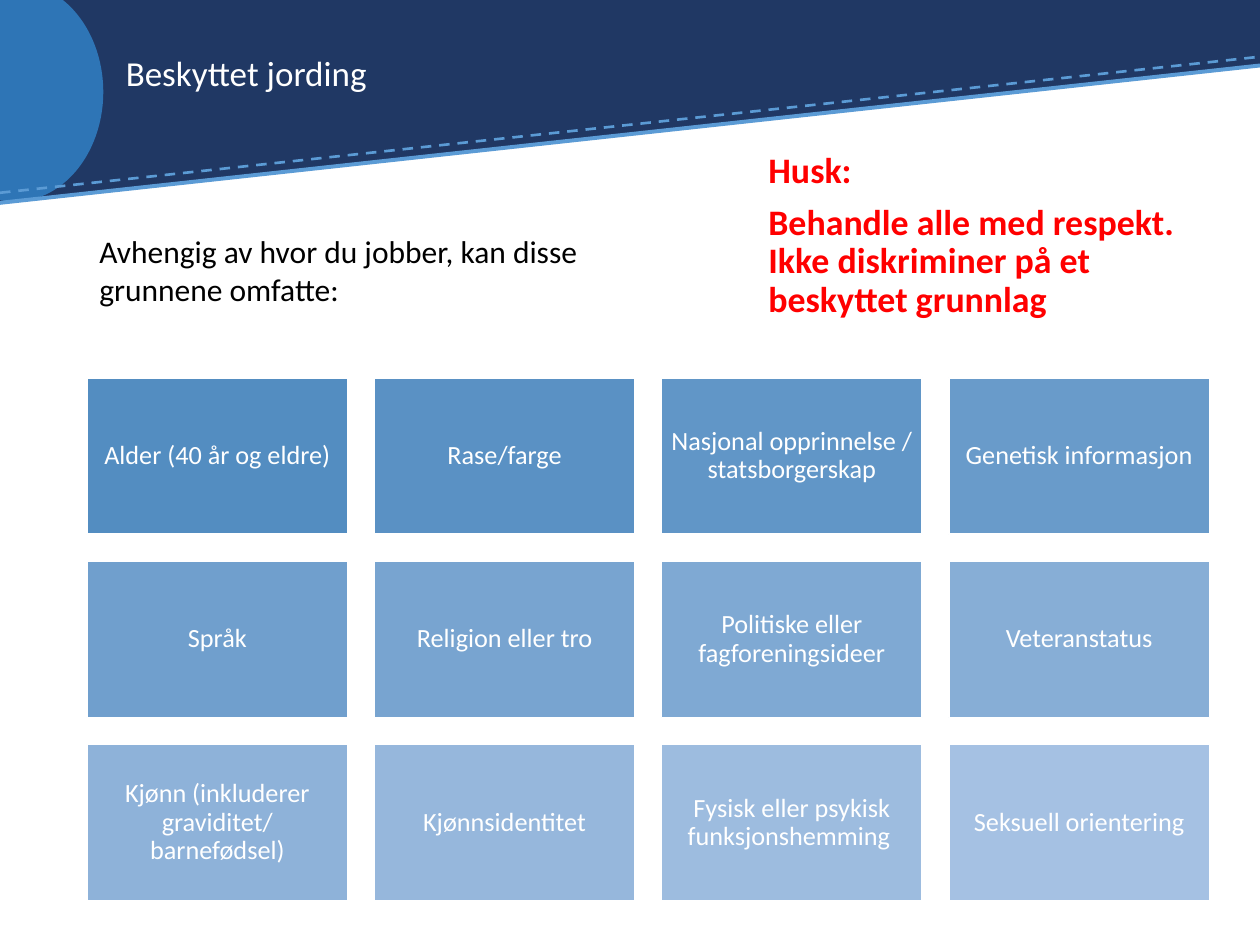
"""Build the slide on protected grounds with a banner and a grid of tiles."""

import dataclasses
import typing

import lxml.etree
import pptx
import pptx.dml.color
import pptx.enum.dml
import pptx.enum.shapes
import pptx.enum.text
import pptx.oxml.ns
import pptx.util
from pptx.util import Inches

SHAPE = pptx.enum.shapes.MSO_SHAPE
ANCHOR = pptx.enum.text.MSO_ANCHOR
ALIGN = pptx.enum.text.PP_ALIGN


@dataclasses.dataclass(frozen=True)
class Theme:
    font: str = "Calibri"
    navy: str = "203864"
    blue: str = "2E75B6"
    stripe: str = "5B9BD5"
    white: str = "FFFFFF"
    black: str = "000000"
    red: str = "FF0000"
    tile_first: str = "538DC1"
    tile_last: str = "A5C1E3"
    title_size: float = 20
    reminder_size: float = 20.5
    intro_size: float = 18
    tile_size: float = 15


@dataclasses.dataclass(frozen=True)
class Box:
    left: float
    top: float
    width: float
    height: float

    def lengths(self) -> list[int]:
        return [Inches(value) for value in dataclasses.astuple(self)]


@dataclasses.dataclass(frozen=True)
class TextStyle:
    size: float
    color: str
    bold: bool = False
    spacing: float = 0.9
    before: float = 0
    align: typing.Any = ALIGN.LEFT
    anchor: typing.Any = ANCHOR.TOP


@dataclasses.dataclass(frozen=True)
class Stripe:
    start_y: float
    end_y: float
    width: float
    dash: typing.Any = None


THEME = Theme()
SLIDE_WIDTH, SLIDE_HEIGHT = 10, 7.5
STRIPES = [
    Stripe(1.53, 0.45, 1.5, pptx.enum.dml.MSO_LINE.DASH),
    Stripe(1.61, 0.52, 2.25),
]
GROUNDS = [
    "Alder (40 år og eldre)",
    "Rase/farge",
    "Nasjonal opprinnelse / statsborgerskap",
    "Genetisk informasjon",
    "Språk",
    "Religion eller tro",
    "Politiske eller fagforeningsideer",
    "Veteranstatus",
    "Kjønn (inkluderer graviditet/ barnefødsel)",
    "Kjønnsidentitet",
    "Fysisk eller psykisk funksjonshemming ",
    "Seksuell orientering",
]
COLUMNS = 4
FIRST_TILE = Box(0.69, 3, 2.07, 1.24)
COLUMN_STEP, ROW_STEP = 2.28, 1.455


def rgb(color: str) -> pptx.dml.color.RGBColor:
    """Turn a hex string into a colour."""
    return pptx.dml.color.RGBColor.from_string(color)


def blend(first: str, last: str, share: float) -> str:
    """Return the colour that lies a share of the way from first to last."""
    pairs = zip(bytes.fromhex(first), bytes.fromhex(last))
    return bytes(int(a + (b - a) * share) for a, b in pairs).hex().upper()


def write(frame, paragraphs: list[str], style: TextStyle) -> None:
    """Fill a text frame with paragraphs in one style."""
    frame.word_wrap = True
    frame.vertical_anchor = style.anchor
    for index, text in enumerate(paragraphs):
        paragraph = frame.add_paragraph() if index else frame.paragraphs[0]
        paragraph.text = text
        paragraph.alignment = style.align
        paragraph.line_spacing = style.spacing
        if index:
            paragraph.space_before = pptx.util.Pt(style.before)
        paragraph.font.name = THEME.font
        paragraph.font.size = pptx.util.Pt(style.size)
        paragraph.font.bold = style.bold
        paragraph.font.color.rgb = rgb(style.color)


def add_filled(slide, kind, box: Box, color: str):
    """Add a preset shape with a plain fill and no line."""
    shape = slide.shapes.add_shape(kind, *box.lengths())
    shape.shadow.inherit = False
    shape.fill.solid()
    shape.fill.fore_color.rgb = rgb(color)
    shape.line.fill.background()
    return shape


def add_text(slide, box: Box, paragraphs: list[str], style: TextStyle) -> None:
    """Add a text box."""
    write(slide.shapes.add_textbox(*box.lengths()).text_frame, paragraphs, style)


def add_stripe(slide, stripe: Stripe) -> None:
    """Add a slanted line across the slide."""
    line = slide.shapes.add_connector(
        pptx.enum.shapes.MSO_CONNECTOR.STRAIGHT,
        Inches(0), Inches(stripe.start_y), Inches(SLIDE_WIDTH), Inches(stripe.end_y),
    )
    line.line.color.rgb = rgb(THEME.stripe)
    line.line.width = pptx.util.Pt(stripe.width)
    if stripe.dash is not None:
        line.line.dash_style = stripe.dash
    lxml.etree.SubElement(line.element.spPr, pptx.oxml.ns.qn("a:effectLst"))


def add_banner(slide) -> None:
    """Add the slanted banner with its disc and stripes."""
    add_filled(slide, SHAPE.RECTANGLE, Box(0, 0, SLIDE_WIDTH, 0.52), THEME.navy)
    slope = add_filled(slide, SHAPE.RIGHT_TRIANGLE, Box(0, 0.51, SLIDE_WIDTH, 1.09), THEME.navy)
    slope.element.spPr.find(pptx.oxml.ns.qn("a:xfrm")).set("flipV", "1")
    add_filled(slide, SHAPE.OVAL, Box(-0.59, -0.14, 1.41, 1.74), THEME.blue)
    for stripe in STRIPES:
        add_stripe(slide, stripe)


def add_tile(slide, index: int, ground: str) -> None:
    """Add one ground to the grid, paler the later it comes."""
    row, column = divmod(index, COLUMNS)
    box = dataclasses.replace(
        FIRST_TILE,
        left=FIRST_TILE.left + column * COLUMN_STEP,
        top=FIRST_TILE.top + row * ROW_STEP,
    )
    color = blend(THEME.tile_first, THEME.tile_last, index / (len(GROUNDS) - 1))
    tile = add_filled(slide, SHAPE.RECTANGLE, box, color)
    tile.line.color.rgb = rgb(THEME.white)
    tile.line.width = pptx.util.Pt(1)
    frame = tile.text_frame
    frame.margin_left = frame.margin_right = Inches(0.06)
    frame.margin_top = frame.margin_bottom = Inches(0.06)
    write(frame, [ground], TextStyle(
        THEME.tile_size, THEME.white, align=ALIGN.CENTER, anchor=ANCHOR.MIDDLE))


def main() -> None:
    """Build and save the presentation."""
    deck = pptx.Presentation()
    deck.slide_width, deck.slide_height = Inches(SLIDE_WIDTH), Inches(SLIDE_HEIGHT)
    slide = deck.slides.add_slide(deck.slide_layouts[6])
    add_banner(slide)
    add_text(slide, Box(0.9, 0.2, 8.07, 0.8), ["Beskyttet jording"],
             TextStyle(THEME.title_size, THEME.white, anchor=ANCHOR.MIDDLE))
    add_text(slide, Box(6, 1.16, 3.78, 1.7),
             ["Husk:", "Behandle alle med respekt. Ikke diskriminer på et beskyttet grunnlag"],
             TextStyle(THEME.reminder_size, THEME.red, bold=True, before=7.5))
    for index, ground in enumerate(GROUNDS):
        add_tile(slide, index, ground)
    add_text(slide, Box(0.69, 1.79, 4.61, 0.7),
             ["Avhengig av hvor du jobber, kan disse grunnene omfatte:"],
             TextStyle(THEME.intro_size, THEME.black, spacing=1.0))
    deck.save("out.pptx")


if __name__ == "__main__":
    main()
